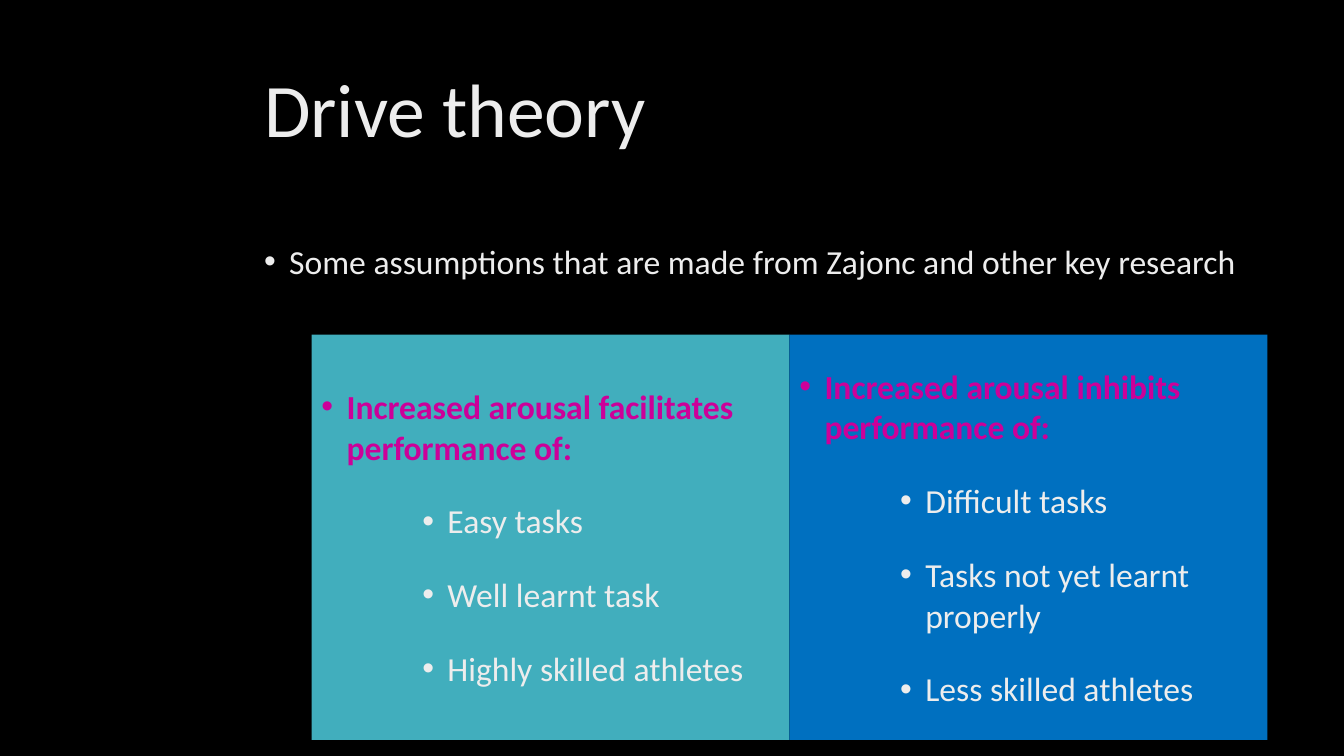
"""Build the drive theory slide."""
from dataclasses import dataclass

from lxml import etree
from pptx import Presentation
from pptx.dml.color import RGBColor
from pptx.enum.shapes import MSO_SHAPE
from pptx.enum.text import MSO_ANCHOR, PP_ALIGN
from pptx.oxml.ns import qn
from pptx.slide import Slide
from pptx.text.text import TextFrame, _Paragraph
from pptx.util import Inches, Pt

RECT = MSO_SHAPE.RECTANGLE
MIDDLE = MSO_ANCHOR.MIDDLE
LEFT = PP_ALIGN.LEFT

BLACK = RGBColor(0x00, 0x00, 0x00)
PALE = RGBColor(0xED, 0xED, 0xED)
PINK = RGBColor(0xCC, 0x00, 0x99)
TEAL = RGBColor(0x41, 0xAE, 0xBD)
BLUE = RGBColor(0x00, 0x70, 0xC0)

FONT = "Calibri"
GAP = Pt(12)
TEXT_X, TEXT_W = 2.52, 9.89
PANEL_X, PANEL_Y, PANEL_W, PANEL_H = 3.09, 3.32, 4.74, 4.02


@dataclass
class Panel:
    """A coloured panel with a heading and its tasks."""
    fill: RGBColor
    head: str
    tasks: list[str]


PANELS = [
    Panel(TEAL, "Increased arousal facilitates performance of:",
          ["Easy tasks", "Well learnt task", "Highly skilled athletes"]),
    Panel(BLUE, "Increased arousal inhibits performance of:",
          ["Difficult tasks", "Tasks not yet learnt properly", "Less skilled athletes"]),
]


def style(para: _Paragraph, size: int, color: RGBColor, bold: bool = False) -> None:
    """Align a paragraph and format its runs."""
    para.alignment = LEFT
    for run in para.runs:
        run.font.name = FONT
        run.font.size = Pt(size)
        run.font.bold = bold
        run.font.color.rgb = color


def bullet(para: _Paragraph, indent: float) -> None:
    """Give a paragraph a hanging round bullet."""
    props = para._p.get_or_add_pPr()
    props.set("marL", str(Inches(indent)))
    props.set("indent", str(Inches(-0.25)))
    etree.SubElement(props, qn("a:buFont")).set("typeface", "Arial")
    etree.SubElement(props, qn("a:buChar")).set("char", "•")


def add_text(slide: Slide, text: str, top: float, height: float) -> TextFrame:
    """Add a wrapped, vertically centred text box."""
    box = slide.shapes.add_textbox(
        Inches(TEXT_X), Inches(top), Inches(TEXT_W), Inches(height))
    frame = box.text_frame
    frame.word_wrap = True
    frame.vertical_anchor = MIDDLE
    frame.text = text
    return frame


def add_panel(slide: Slide, panel: Panel, left: float) -> None:
    """Draw a panel and its bulleted text."""
    shape = slide.shapes.add_shape(
        RECT, Inches(left), Inches(PANEL_Y), Inches(PANEL_W), Inches(PANEL_H))
    shape.shadow.inherit = False
    shape.fill.solid()
    shape.fill.fore_color.rgb = panel.fill
    shape.line.fill.background()
    frame = shape.text_frame
    frame.word_wrap = True
    frame.vertical_anchor = MIDDLE
    frame.text = "\n".join([panel.head, *panel.tasks])
    head, *tasks = frame.paragraphs
    bullet(head, 0.25)
    style(head, 24, PINK, True)
    for task in tasks:
        task.level = 2
        bullet(task, 1.25)
        task.space_before = GAP
        style(task, 24, PALE)
    for para in frame.paragraphs[:-1]:
        para.space_after = GAP


def main() -> None:
    """Build and save the slide."""
    deck = Presentation()
    deck.slide_width, deck.slide_height = Inches(13.33), Inches(7.5)
    slide = deck.slides.add_slide(deck.slide_layouts[6])
    slide.background.fill.solid()
    slide.background.fill.fore_color.rgb = BLACK

    title = add_text(slide, "Drive theory", 0.4, 1.45).paragraphs[0]
    title.line_spacing = 0.9
    style(title, 54, PALE)

    intro = add_text(
        slide, "Some assumptions that are made from Zajonc and other key research",
        2, 1.18).paragraphs[0]
    bullet(intro, 0.25)
    style(intro, 24, PALE)

    for i, panel in enumerate(PANELS):
        add_panel(slide, panel, PANEL_X + i * PANEL_W)
    deck.save("out.pptx")


if __name__ == "__main__":
    main()
